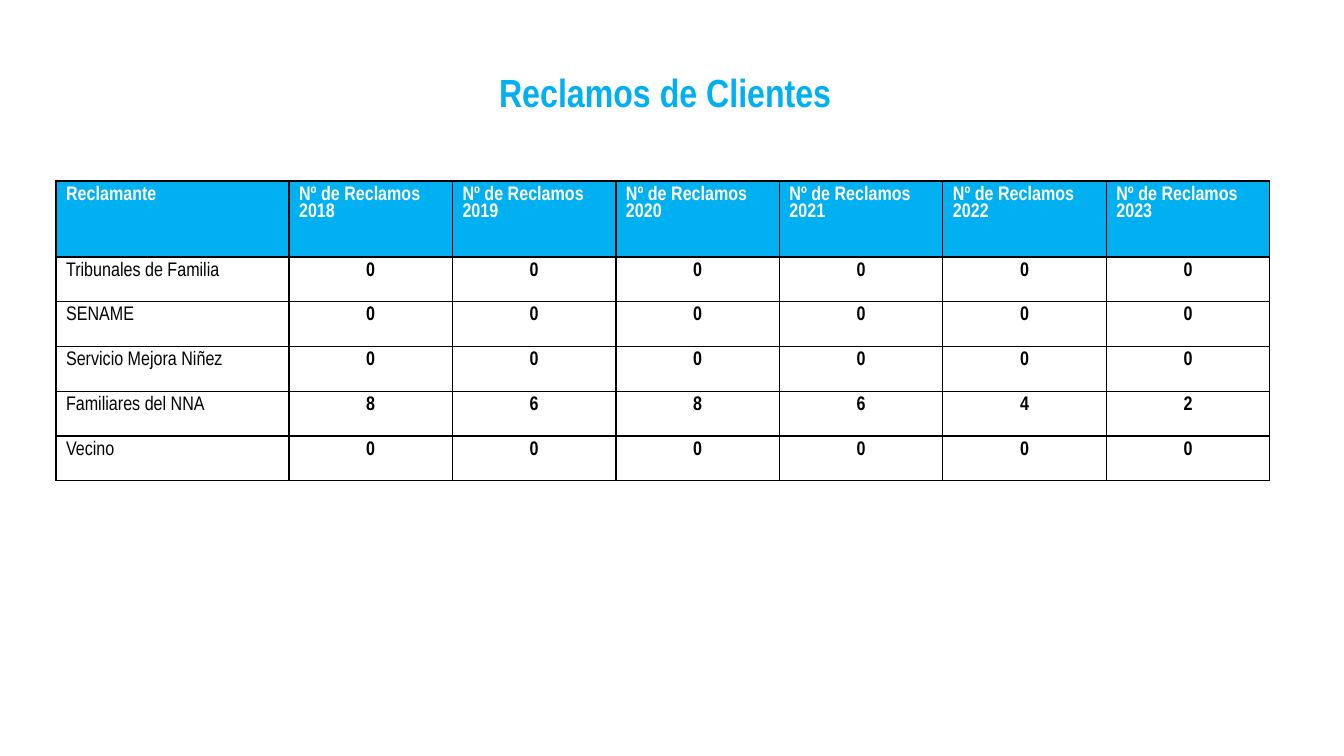
from dataclasses import dataclass

from lxml import etree
from pptx import Presentation
from pptx.dml.color import RGBColor
from pptx.enum.text import MSO_ANCHOR, PP_ALIGN
from pptx.oxml.ns import qn
from pptx.util import Emu, Pt

LEFT, CENTER = PP_ALIGN.LEFT, PP_ALIGN.CENTER
MIDDLE = MSO_ANCHOR.MIDDLE
EMU_PER_PX = 914400 / 100.8
FONT = "Arial Narrow"
COLORS = {"sky": "00B0F0", "white": "FFFFFF", "black": "000000"}

TABLE_LEFT, TABLE_TOP, TABLE_WIDTH, TABLE_HEIGHT = 56, 181, 1214, 300
CLAIMANT_WIDTH, HEADER_HEIGHT = 233, 76
YEARS = range(2018, 2024)


@dataclass
class Claimant:
    name: str
    claims: tuple[int, ...] = (0,) * len(YEARS)


@dataclass
class CellStyle:
    color: str
    fill: str | None
    bold: bool
    alignment: PP_ALIGN


CLAIMANTS = [
    Claimant("Tribunales de Familia"),
    Claimant("SENAME"),
    Claimant("Servicio Mejora Niñez"),
    Claimant("Familiares del NNA", (8, 6, 8, 6, 4, 2)),
    Claimant("Vecino"),
]
HEADER = CellStyle("white", "sky", True, LEFT)
NAME = CellStyle("black", None, False, LEFT)
COUNT = CellStyle("black", "white", True, CENTER)


def px(length: float) -> Emu:
    return Emu(round(length * EMU_PER_PX))


def write(paragraph, text: str, size: int, color: str, bold: bool,
          alignment: PP_ALIGN, line_spacing: float) -> None:
    paragraph.text = text
    paragraph.alignment = alignment
    paragraph.line_spacing = line_spacing
    font = paragraph.font
    font.name, font.size, font.bold = FONT, Pt(size), bold
    font.color.rgb = RGBColor.from_string(COLORS[color])


def add_borders(cell) -> None:
    """Draw a thin black line on all four sides, placed before the cell fill."""
    properties = cell._tc.get_or_add_tcPr()
    for index, side in enumerate(("a:lnL", "a:lnR", "a:lnT", "a:lnB")):
        line = etree.Element(qn(side), w=str(Pt(1)))
        fill = etree.SubElement(line, qn("a:solidFill"))
        etree.SubElement(fill, qn("a:srgbClr"), val=COLORS["black"])
        properties.insert(index, line)


def fill_cell(cell, text: str, style: CellStyle) -> None:
    write(cell.text_frame.paragraphs[0], text, 14, style.color, style.bold,
          style.alignment, 0.95)
    if style.fill is None:
        cell.fill.background()
    else:
        cell.fill.solid()
        cell.fill.fore_color.rgb = RGBColor.from_string(COLORS[style.fill])
    add_borders(cell)


def add_title(slide) -> None:
    box = slide.shapes.add_textbox(px(300), px(51), px(730), px(82))
    frame = box.text_frame
    frame.word_wrap = True
    frame.vertical_anchor = MIDDLE
    write(frame.paragraphs[0], "Reclamos de Clientes", 28, "sky", True, CENTER, 1.0)


def add_claims_table(slide) -> None:
    table = slide.shapes.add_table(
        len(CLAIMANTS) + 1, len(YEARS) + 1,
        px(TABLE_LEFT), px(TABLE_TOP), px(TABLE_WIDTH), px(TABLE_HEIGHT)).table
    table.first_row = table.horz_banding = False

    year_width = (TABLE_WIDTH - CLAIMANT_WIDTH) / len(YEARS)
    for index, column in enumerate(table.columns):
        column.width = px(year_width if index else CLAIMANT_WIDTH)
    row_height = (TABLE_HEIGHT - HEADER_HEIGHT) / len(CLAIMANTS)
    for index, row in enumerate(table.rows):
        row.height = px(row_height if index else HEADER_HEIGHT)

    headings = ["Reclamante", *(f"Nº de Reclamos {year}" for year in YEARS)]
    for column, heading in enumerate(headings):
        fill_cell(table.cell(0, column), heading, HEADER)
    for row, claimant in enumerate(CLAIMANTS, start=1):
        fill_cell(table.cell(row, 0), claimant.name, NAME)
        for column, count in enumerate(claimant.claims, start=1):
            fill_cell(table.cell(row, column), str(count), COUNT)


def main() -> None:
    presentation = Presentation()
    presentation.slide_width, presentation.slide_height = px(1344), px(756)
    slide = presentation.slides.add_slide(presentation.slide_layouts[6])
    add_title(slide)
    add_claims_table(slide)
    presentation.save("out.pptx")


if __name__ == "__main__":
    main()
